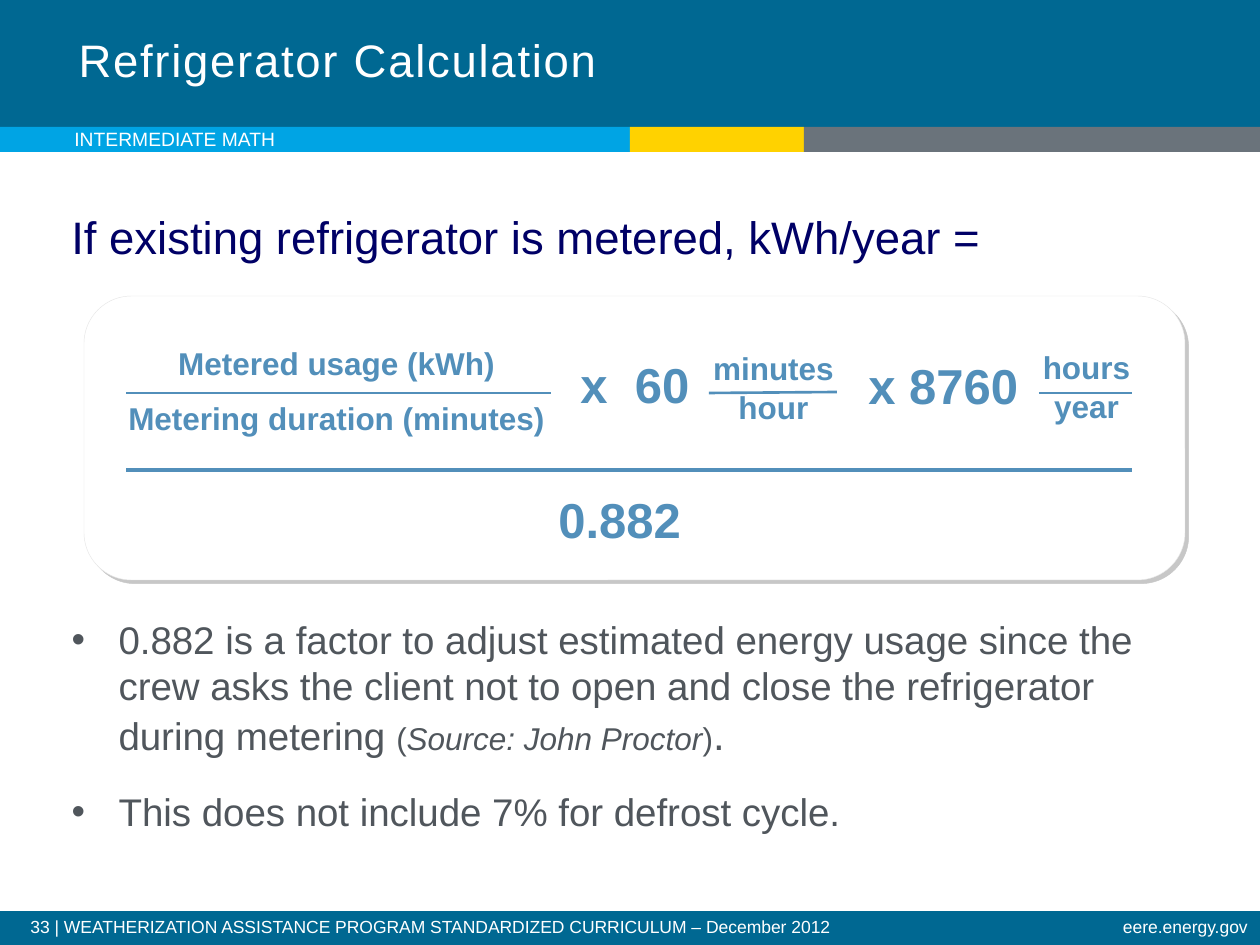
from lxml import etree
from pptx import Presentation
from pptx.dml.color import RGBColor
from pptx.enum.shapes import MSO_CONNECTOR, MSO_SHAPE
from pptx.enum.text import MSO_ANCHOR, MSO_AUTO_SIZE, PP_ALIGN
from pptx.oxml import parse_xml
from pptx.oxml.ns import qn
from pptx.util import Pt

PX = 914400 / 126
NAMESPACE = 'xmlns:a="http://schemas.openxmlformats.org/drawingml/2006/main"'
CENTER, RIGHT = PP_ALIGN.CENTER, PP_ALIGN.RIGHT
TOP, MIDDLE = MSO_ANCHOR.TOP, MSO_ANCHOR.MIDDLE
RECTANGLE, ROUNDED = MSO_SHAPE.RECTANGLE, MSO_SHAPE.ROUNDED_RECTANGLE
STRAIGHT = MSO_CONNECTOR.STRAIGHT
NO_AUTOFIT = MSO_AUTO_SIZE.NONE

TEAL, SKY, YELLOW, GRAY = "006892", "00A4E4", "FFD200", "6A737B"
WHITE, NAVY, FORMULA_BLUE, BODY_GRAY = "FFFFFF", "000066", "528FBA", "50565C"

BARS = [
    ((0, 0, 1260, 127), TEAL),
    ((0, 911, 1260, 34), TEAL),
    ((0, 127, 630, 25), SKY),
    ((630, 127, 174, 25), YELLOW),
    ((804, 127, 456, 25), GRAY),
]

FOOTER = {"size": 10, "color": WHITE}
HEADING = {"size": 26, "color": NAVY}
BIG = {"size": 28, "bold": True, "color": FORMULA_BLUE}
SMALL = {"size": 18, "bold": True, "color": FORMULA_BLUE}
BODY = {"size": 22, "color": BODY_GRAY}
SOURCE = {**BODY, "size": 18}

TITLE = [[("Refrigerator Calculation", {"size": 26, "color": WHITE, "spacing": 100})]]
BULLETS = [
    [
        ("0.882 is a factor to adjust estimated energy usage since the crew asks "
         "the client not to open and close the refrigerator during metering ", BODY),
        ("(", SOURCE),
        ("Source: John Proctor", {**SOURCE, "italic": True}),
        (")", SOURCE),
        (".", {**BODY, "size": 24}),
    ],
    [("This does not include 7% for defrost cycle.", BODY)],
]

TIGHT = {"line_spacing": 0.9}
FRACTION = {"alignment": CENTER, "line_spacing": 0.85}
USAGE = {"alignment": CENTER, "space_after": Pt(6)}

# Box in px, paragraphs made of runs, paragraph format
LABELS = [
    ((18, 912, 1004, 33),
     [[("33 | WEATHERIZATION ASSISTANCE PROGRAM STANDARDIZED CURRICULUM – December 2012",
        FOOTER)]], TIGHT),
    ((755, 912, 505, 33), [[("eere.energy.gov", FOOTER)]], {**TIGHT, "alignment": RIGHT}),
    ((62, 121, 475, 43), [[("INTERMEDIATE MATH", {"size": 11, "color": WHITE})]], {}),
    ((59, 209, 1155, 70),
     [[("If existing refrigerator is metered, kWh/year =", HEADING)]], TIGHT),
    ((89, 338, 495, 107),
     [[("Metered usage (kWh)", SMALL)], [("Metering duration (minutes)", SMALL)]], USAGE),
    ((568, 348, 179, 72), [[("x ", {**BIG, "spacing": 390}), ("60", BIG)]], {}),
    ((675, 349, 197, 87), [[("minutes", SMALL)], [("hour", SMALL)]], FRACTION),
    ((856, 349, 193, 72), [[("x 8760", BIG)]], {}),
    ((988, 348, 197, 87), [[("hours", SMALL)], [("year", SMALL)]], FRACTION),
    ((546, 483, 163, 72), [[("0.882", BIG)]], {}),
]

PANEL = (84, 296, 1101, 284)
# Start and end in px, width in points
FRACTION_LINES = [
    ((126, 393), (551, 393), 1.5),
    ((709, 393), (837, 392), 1.5),
    ((1039, 393), (1132, 393), 1.5),
    ((126, 470), (1132, 470), 2.25),
]


def emu(*lengths):
    return [round(length * PX) for length in lengths]


def rgb(color):
    return RGBColor.from_string(color)


def place(shape, box):
    for name, value in zip(("left", "top", "width", "height"), emu(*box)):
        setattr(shape, name, value)


def write(shape, paragraphs, paragraph_format, anchor=TOP, bulleted=False):
    frame = shape.text_frame
    frame.word_wrap = True
    frame.auto_size = NO_AUTOFIT
    frame.vertical_anchor = anchor
    for index, runs in enumerate(paragraphs):
        paragraph = frame.add_paragraph() if index else frame.paragraphs[0]
        if bulleted:
            add_bullet(paragraph)
        first_size = runs[0][1]["size"]
        paragraph.space_before = Pt(round(first_size * 0.2, 1) if index else 0)
        for name, value in paragraph_format.items():
            setattr(paragraph, name, value)
        for text, style in runs:
            run = paragraph.add_run()
            run.text = text
            run.font.name = "Arial"
            run.font.size = Pt(style["size"])
            run.font.bold = style.get("bold", False)
            run.font.italic = style.get("italic", False)
            run.font.color.rgb = rgb(style["color"])
            if "spacing" in style:
                run.font._element.set("spc", str(style["spacing"]))


def add_bullet(paragraph):
    properties = paragraph._p.get_or_add_pPr()
    indent = emu(47)[0]
    properties.set("marL", str(indent))
    properties.set("indent", str(-indent))
    etree.SubElement(properties, qn("a:buFont")).set("typeface", "Arial")
    etree.SubElement(properties, qn("a:buChar")).set("char", "•")


def add_block(shapes, kind, box, color):
    block = shapes.add_shape(kind, *emu(*box))
    block.shadow.inherit = False
    block.fill.solid()
    block.fill.fore_color.rgb = rgb(color)
    block.line.fill.background()
    return block


def add_panel(shapes):
    panel = add_block(shapes, ROUNDED, PANEL, WHITE)
    panel.adjustments[0] = 0.167
    panel.line.color.rgb = rgb("E6E6E6")
    panel.line.width = Pt(0.25)
    effects = panel._element.spPr.find(qn("a:effectLst"))
    effects.append(parse_xml(
        f'<a:outerShdw {NAMESPACE} blurRad="0" dist="38100" dir="2700000" algn="tl" '
        'rotWithShape="0"><a:srgbClr val="808080"><a:alpha val="43000"/>'
        '</a:srgbClr></a:outerShdw>'))


def add_line(shapes, start, end, width):
    line = shapes.add_connector(STRAIGHT, *emu(*start, *end))
    line.line.color.rgb = rgb(FORMULA_BLUE)
    line.line.width = Pt(width)
    etree.SubElement(line._element.spPr, qn("a:effectLst"))


def main():
    presentation = Presentation()
    presentation.slide_width, presentation.slide_height = emu(1260, 945)
    slide = presentation.slides.add_slide(presentation.slide_layouts[1])
    shapes = slide.shapes
    title, body = shapes.title, slide.placeholders[1]

    for box, color in BARS:
        add_block(shapes, RECTANGLE, box, color)
    add_panel(shapes)
    for start, end, width in FRACTION_LINES:
        add_line(shapes, start, end, width)
    for box, paragraphs, paragraph_format in LABELS:
        write(shapes.add_textbox(*emu(*box)), paragraphs, paragraph_format)

    place(title, (66, 0, 740, 125))
    write(title, TITLE, {"alignment": PP_ALIGN.LEFT, "line_spacing": Pt(28)}, MIDDLE)
    place(body, (59, 610, 1155, 240))
    write(body, BULLETS, {"space_after": Pt(12)}, bulleted=True)
    for placeholder in (title, body):
        shapes._spTree.append(placeholder._element)  # in front of the bars

    presentation.save("out.pptx")


if __name__ == "__main__":
    main()
